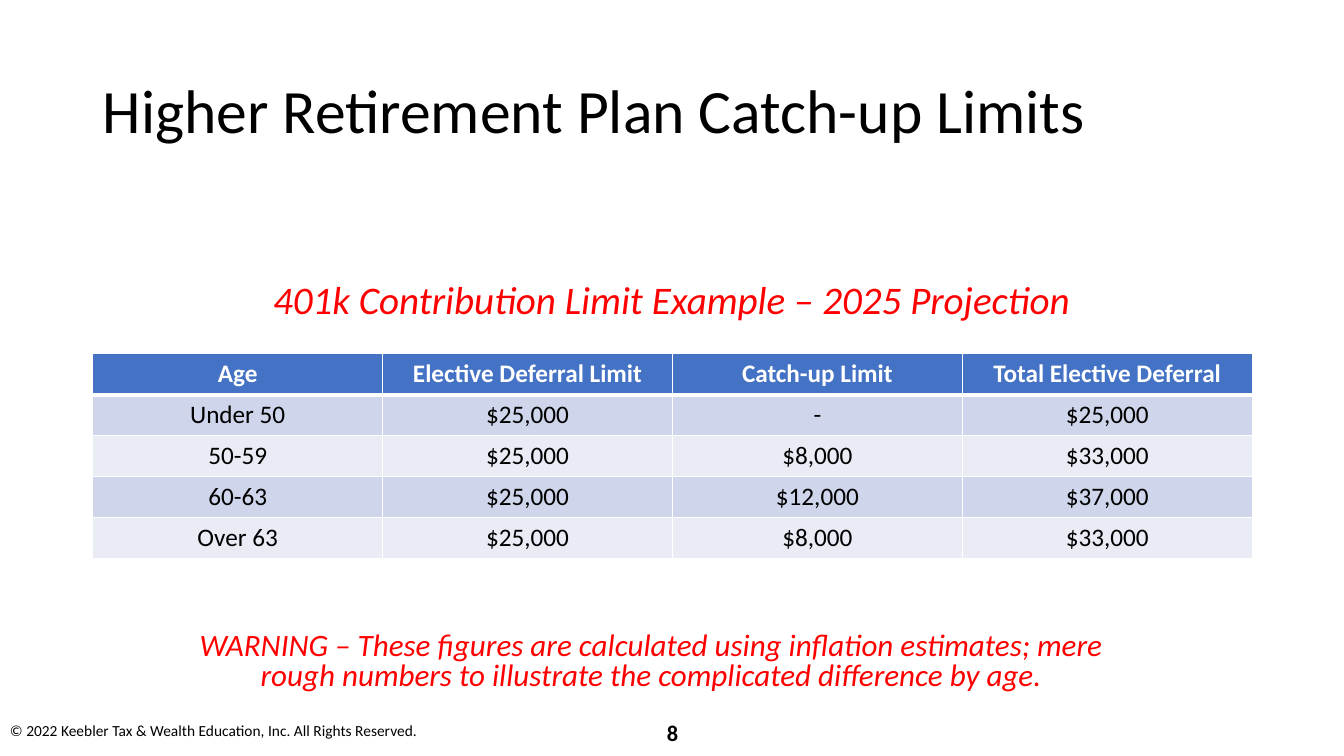
from lxml.etree import SubElement
from pptx import Presentation
from pptx.dml.color import RGBColor
from pptx.enum.text import MSO_ANCHOR, PP_ALIGN
from pptx.oxml.ns import qn
from pptx.util import Inches, Pt

# Content
TITLE = "Higher Retirement Plan Catch-up Limits"
LIMITS = [
    ("Age", "Elective Deferral Limit", "Catch-up Limit", "Total Elective Deferral"),
    ("Under 50", "$25,000", "-", "$25,000"),
    ("50-59", "$25,000", "$8,000", "$33,000"),
    ("60-63", "$25,000", "$12,000", "$37,000"),
    ("Over 63", "$25,000", "$8,000", "$33,000"),
]
CENTER, MIDDLE, TOP = PP_ALIGN.CENTER, MSO_ANCHOR.MIDDLE, MSO_ANCHOR.TOP
# Text, box, anchor, alignment, line spacing, font
TEXTS = [
    ("401k Contribution Limit Example – 2025 Projection",
     (2.48, 2.66, 8.36, 0.73), MIDDLE, CENTER, 0.7,
     dict(size=Pt(27.9), color="FF0000", italic=True)),
    ("WARNING – These figures are calculated using inflation estimates; "
     "mere rough numbers to illustrate the complicated difference by age.",
     (1.65, 6.21, 9.62, 0.73), MIDDLE, CENTER, 0.8,
     dict(size=Pt(22.2), color="FF0000", italic=True)),
    ("© 2022 Keebler Tax & Wealth Education, Inc. All Rights Reserved.",
     (0, 7.1, 4.72, 0.29), TOP, PP_ALIGN.LEFT, 1.0, dict(size=Pt(11))),
    ("8", (6.42, 7.09, 0.5, 0.37), TOP, CENTER, 1.0,
     dict(size=Pt(16), bold=True)),
]
TABLE_BOX = (0.92, 3.51, 11.5, 2.02)
HEADER_FILL, BAND_FILLS = "4472C4", ("CFD5EA", "E9EBF5")


def rgb(value):
    return RGBColor.from_string(value)


def write(tf, text, anchor=None, align=None, spacing=None, color="000000", **font):
    tf.word_wrap = True
    if anchor is not None:
        tf.vertical_anchor = anchor
    p = tf.paragraphs[0]
    p.alignment, p.line_spacing = align, spacing
    r = p.add_run()
    r.text = text
    r.font.color.rgb = rgb(color)
    for name, value in {"name": "Calibri", **font}.items():
        setattr(r.font, name, value)


def add_borders(cell, widths):
    tc_pr = cell._tc.get_or_add_tcPr()
    for side, width in widths.items():
        ln = SubElement(tc_pr, qn(f"a:ln{side}"), w=str(Pt(width)))
        fill = SubElement(ln, qn("a:solidFill"))
        SubElement(fill, qn("a:srgbClr"), val="FFFFFF")


prs = Presentation()
prs.slide_width, prs.slide_height = Inches(13.33), Inches(7.5)
s = prs.slides.add_slide(prs.slide_layouts[5])

# Title
title = s.shapes.title
title.left, title.top, title.width, title.height = map(Inches, (0.92, 0.4, 11.5, 1.45))
write(title.text_frame, TITLE, MIDDLE, PP_ALIGN.LEFT, 0.9, size=Pt(44))

# Limits table
table = s.shapes.add_table(len(LIMITS), len(LIMITS[0]), *map(Inches, TABLE_BOX)).table
for row in table.rows:
    row.height = Inches(TABLE_BOX[3] / len(LIMITS))
for i, values in enumerate(LIMITS):
    header = i == 0
    for j, value in enumerate(values):
        cell = table.cell(i, j)
        add_borders(cell, {"L": 1, "R": 1, "T": 3 if i == 1 else 1, "B": 3 if header else 1})
        cell.fill.solid()
        cell.fill.fore_color.rgb = rgb(HEADER_FILL if header else BAND_FILLS[(i - 1) % 2])
        write(cell.text_frame, value, align=CENTER, size=Pt(18), bold=header,
              color="FFFFFF" if header else "000000")

# Heading, warning and footer
for text, box, anchor, align, spacing, font in TEXTS:
    tf = s.shapes.add_textbox(*map(Inches, box)).text_frame
    write(tf, text, anchor, align, spacing, **font)

prs.save("out.pptx")
